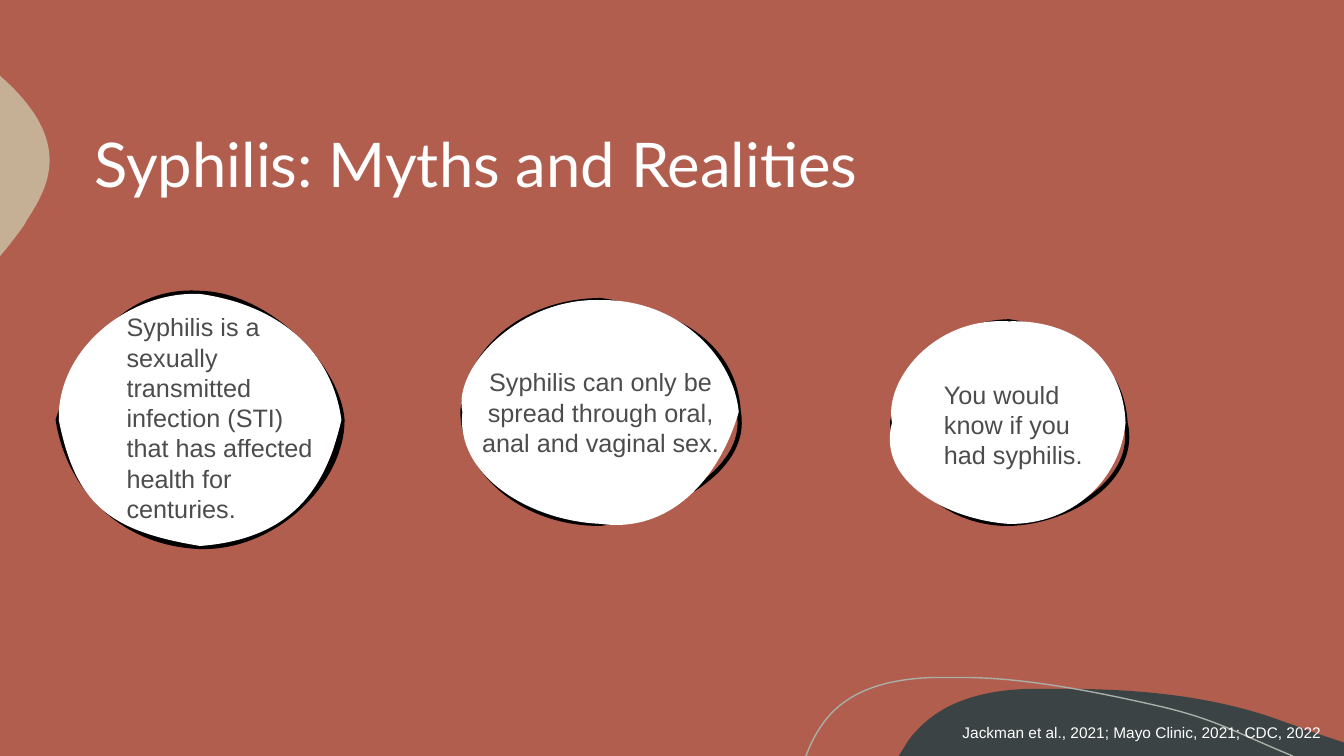
from copy import deepcopy
from dataclasses import dataclass

from lxml import etree
from pptx import Presentation
from pptx.dml.color import RGBColor
from pptx.enum.text import MSO_ANCHOR, PP_ALIGN
from pptx.oxml.ns import qn
from pptx.shapes.autoshape import Shape
from pptx.text.text import TextFrame
from pptx.util import Inches, Pt

Point = tuple[float, float]
Segment = tuple[Point, ...]  # one point: straight line; three points: cubic curve

COLOURS = {
    "terracotta": "B15E4E",
    "slate": "3B4345",
    "sand": "C5B096",
    "sage": "A9AEA7",
    "white": "FFFFFF",
    "black": "000000",
}
COLUMNS, ROWS = 160, 90

deck = Presentation()
deck.slide_width, deck.slide_height = Inches(13.333), Inches(7.5)
COLUMN, ROW = deck.slide_width / COLUMNS, deck.slide_height / ROWS
slide = deck.slides.add_slide(deck.slide_layouts[6])


@dataclass(frozen=True)
class Box:
    left: float
    top: float
    width: float
    height: float


@dataclass(frozen=True)
class Outline:
    start: Point
    segments: tuple[Segment, ...]
    fill: str | None = None
    line: str | None = None
    weight: float = 1
    closed: bool = True


@dataclass(frozen=True)
class Caption:
    words: str
    size: float = 18
    colour: str = "black"
    opacity: int = 70
    font: str = "Arial"
    anchor: MSO_ANCHOR = MSO_ANCHOR.TOP
    align: PP_ALIGN = PP_ALIGN.LEFT
    spacing: float | None = None


@dataclass(frozen=True)
class Bubble:
    """Quarter curves run left, top, right, bottom; each has two handles."""
    box: Box
    weight: float
    ring: tuple[Point, ...]
    body: tuple[Point, ...]


def rgb(name: str) -> RGBColor:
    return RGBColor.from_string(COLOURS[name])


def bend(geometry: etree._Element, segments: tuple[Segment, ...], form: Shape) -> None:
    """Turn the straight steps of a path into cubic curves where handles are given."""
    for step, segment in zip(geometry.findall(qn("a:lnTo")), segments):
        if len(segment) == 3:
            curve = etree.Element(qn("a:cubicBezTo"))
            for x, y in segment:
                etree.SubElement(curve, qn("a:pt"), x=str(round(x * COLUMN) - form.left),
                                 y=str(round(y * ROW) - form.top))
            geometry.replace(step, curve)


def draw_outline(outline: Outline, body: tuple[Segment, ...] = ()) -> Shape:
    corners = [outline.start, *(segment[-1] for segment in outline.segments)]
    first, *rest = [(round(x * COLUMN), round(y * ROW)) for x, y in corners]
    builder = slide.shapes.build_freeform(*first)
    builder.add_line_segments(rest, close=outline.closed)
    form = builder.convert_to_shape()
    form.shadow.inherit = False
    ring = form._element.spPr.find(".//" + qn("a:path"))
    if body:  # the ring is only stroked, the body only filled
        inside = deepcopy(ring)
        ring.addnext(inside)
        ring.set("fill", "none")
        inside.set("stroke", "0")
        bend(inside, body, form)
    bend(ring, outline.segments, form)
    if outline.fill:
        form.fill.solid()
        form.fill.fore_color.rgb = rgb(outline.fill)
    else:
        form.fill.background()
    if outline.line:
        form.line.color.rgb = rgb(outline.line)
        form.line.width = Pt(outline.weight)
    else:
        form.line.fill.background()
    return form


def write_caption(frame: TextFrame, caption: Caption) -> None:
    frame.word_wrap = True
    frame.vertical_anchor = caption.anchor
    frame.text = caption.words
    paragraph = frame.paragraphs[0]
    paragraph.alignment = caption.align
    paragraph.line_spacing = caption.spacing
    run = paragraph.runs[0]
    run.font.name, run.font.size = caption.font, Pt(caption.size)
    run.font.color.rgb = rgb(caption.colour)
    if caption.opacity < 100:
        colour = run.font.fill._xPr.find(f"{qn('a:solidFill')}/{qn('a:srgbClr')}")
        etree.SubElement(colour, qn("a:alpha")).set("val", str(caption.opacity * 1000))


def place_caption(box: Box, caption: Caption) -> None:
    holder = slide.shapes.add_textbox(
        round(box.left * COLUMN), round(box.top * ROW),
        round(box.width * COLUMN), round(box.height * ROW))
    write_caption(holder.text_frame, caption)


def quarter_curves(box: Box, handles: tuple[Point, ...]) -> tuple[Point, tuple[Segment, ...]]:
    middle_x, middle_y = box.left + box.width / 2, box.top + box.height / 2
    left = (box.left, middle_y)
    ends = ((middle_x, box.top), (box.left + box.width, middle_y),
            (middle_x, box.top + box.height), left)
    return left, tuple((*handles[2 * i:2 * i + 2], end) for i, end in enumerate(ends))


def draw_bubble(bubble: Bubble) -> Shape:
    start, ring = quarter_curves(bubble.box, bubble.ring)
    _, body = quarter_curves(bubble.box, bubble.body)
    return draw_outline(Outline(start, ring, "white", "black", bubble.weight), body)


# Background and edge decorations
slide.background.fill.solid()
slide.background.fill.fore_color.rgb = rgb("terracotta")

slate_hill = Outline((126.5, 82), (
    ((135.4, 82), (144.5, 82.8), (152.8, 85.9)),
    ((154.3, 86.4), (155.8, 87), (157.3, 87.5)),
    ((160, 88.4),), ((160, 90),), ((107, 90),), ((107.8, 88.7),),
    ((108.2, 88), (108.7, 87.4), (109.3, 86.8)),
    ((112.7, 83.2), (117.8, 82.1), (122.8, 82)),
    ((124, 82), (125.2, 82), (126.5, 82))), fill="slate")
sand_pebble = Outline((0, 9), (
    ((0.1, 9.1),),
    ((3.6, 12.2), (6.5, 16), (5.8, 20.4)),
    ((5.5, 22.4), (4.4, 24.4), (3.2, 26.2)),
    ((2.9, 26.9), (2, 28), (1, 29.3)),
    ((0, 30.5),)), fill="sand")
sage_curve = Outline((95.9, 90), (
    ((96, 89.9),),
    ((96.7, 88), (97.7, 86.3), (98.9, 85)),
    ((102, 81.7), (106.7, 80.8), (111.1, 80.65)),
    ((114.6, 80.65),),
    ((122.6, 80.65), (132, 82.7), (138.6, 84.2)),
    ((145.1, 85.8), (147.1, 87.2), (153.9, 90))), line="sage", closed=False)
for decoration in (slate_hill, sand_pebble, sage_curve):
    draw_outline(decoration)

# Title
place_caption(Box(10.05, 10, 140, 20),
              Caption("Syphilis: Myths and Realities", 44, "white", 100, "Lato",
                      MSO_ANCHOR.MIDDLE, spacing=0.9))

# Definition
draw_bubble(Bubble(
    Box(7, 35, 33.65, 30), 4.5,
    ((9.1, 43.6), (13.9, 34.3), (32, 35.2), (40.2, 43.8),
     (40.7, 57.1), (32.9, 65.2), (14.2, 64.6), (8.2, 57.7)),
    ((6.8, 41.4), (15.6, 34.6), (33.7, 36.4), (39.6, 42.2),
     (39, 56.9), (35.8, 64.1), (12.8, 63.2), (9, 59.9))))
place_caption(Box(13.9, 36.52, 25.2, 30.2), Caption(
    "Syphilis is a sexually transmitted infection (STI) that has affected health for centuries."))

# Awareness
draw_bubble(Bubble(
    Box(106.2, 38.25, 27.8, 24.12), 3,
    ((107.8, 42.1), (114.1, 38.4), (128.5, 39.5), (133.6, 43.6),
     (135.6, 57.1), (127.3, 62.2), (112.2, 62.4), (106.7, 56.3)),
    ((105.2, 45.4), (111.1, 37.7), (129.2, 38), (133.8, 44),
     (133.4, 57.1), (127.7, 62.5), (113, 61.9), (104.3, 57.4))))
place_caption(Box(111.2, 44.55, 20.6, 12.1), Caption("You would know if you had syphilis."))

# Citation
place_caption(Box(113.4, 85.48, 46.6, 4.5), Caption(
    "Jackman et al., 2021; Mayo Clinic, 2021; CDC, 2022", 11, "white", 100))

# Transmission
transmission = draw_bubble(Bubble(
    Box(55.05, 35.72, 32.9, 26.64), 3,
    ((55.8, 40.9), (63, 35.8), (81.5, 37.2), (87.5, 41.6),
     (89.3, 56.5), (78.4, 61.3), (62.2, 62.4), (55.2, 56.2)),
    ((53.9, 43.8), (61.8, 35.4), (81.1, 35.6), (87.4, 42.8),
     (85.6, 57.1), (79.7, 63.5), (62.9, 62), (54.2, 56.5))))
write_caption(transmission.text_frame, Caption(
    "Syphilis can only be spread through oral, anal and vaginal sex.",
    anchor=MSO_ANCHOR.MIDDLE, align=PP_ALIGN.CENTER))

deck.save("out.pptx")
